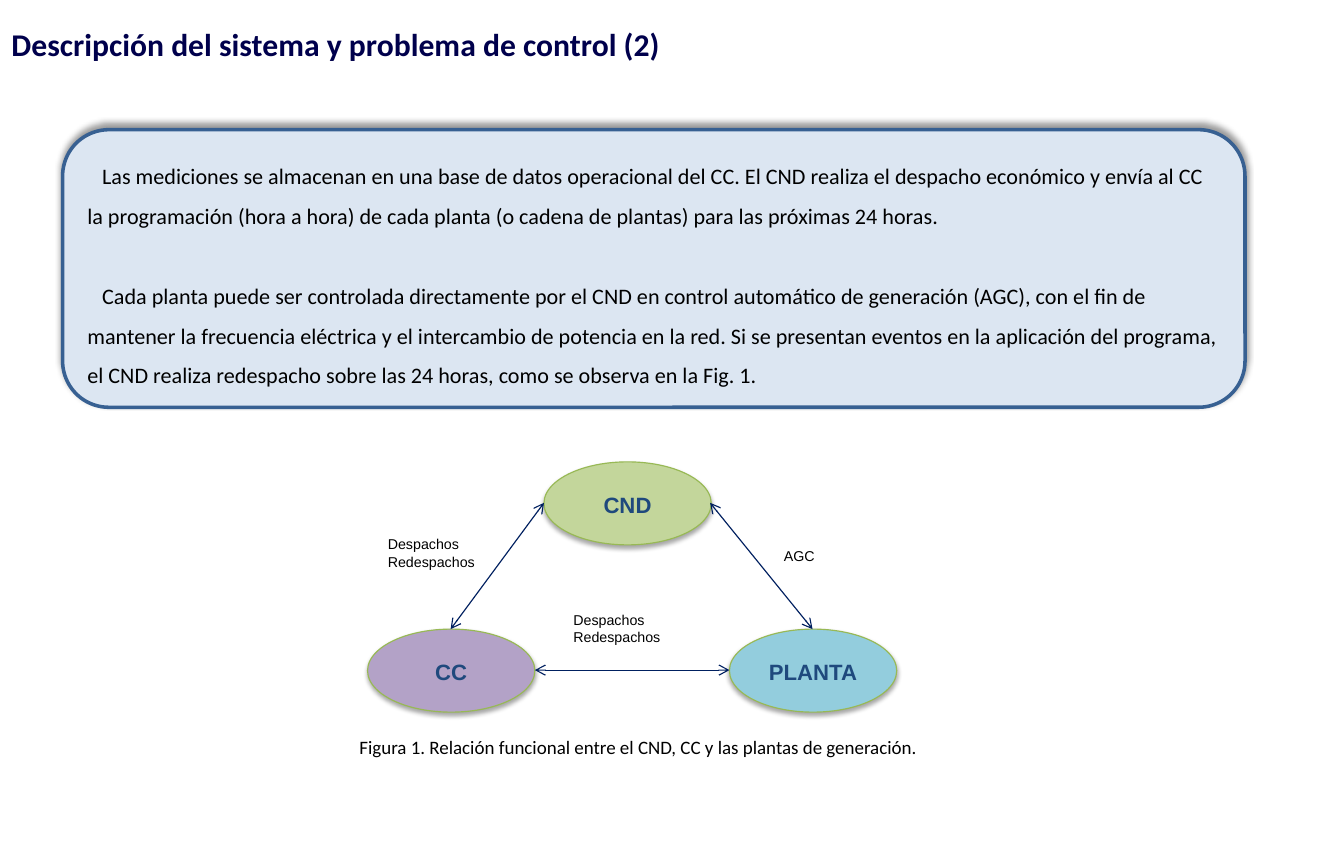
from lxml.etree import SubElement
from pptx import Presentation
from pptx.dml.color import RGBColor
from pptx.enum.shapes import MSO_CONNECTOR, MSO_SHAPE
from pptx.enum.text import MSO_ANCHOR as Anchor, MSO_AUTO_SIZE as AutoSize, PP_ALIGN as Align
from pptx.oxml.ns import qn
from pptx.util import Inches, Pt


def rgb(value):
    """Turn a hex string into a colour."""
    return RGBColor.from_string(value)


class SlideBuilder:
    """Hold the style and the current slide, and add elements to it."""

    NAVY, BLACK, LABEL = "00004C", "000000", "1F497D"
    ARROW, NODE_LINE = "002060", "98B955"

    def __init__(self, prs):
        """Add a title-only slide."""
        self.s = prs.slides.add_slide(prs.slide_layouts[5])

    def set_text(self, tf, lines, size, font, color=BLACK, bold=False, align=Align.LEFT):
        """Fill a text frame with one paragraph per line."""
        tf.word_wrap = True
        tf.text = "\n".join(lines)
        for p in tf.paragraphs:
            p.alignment = align
            for r in p.runs:
                r.font.size, r.font.name, r.font.bold = Pt(size), font, bold
                r.font.color.rgb = rgb(color)

    def title(self, text, box):
        """Place and format the title placeholder."""
        sp = self.s.shapes.title
        sp.left, sp.top, sp.width, sp.height = map(Inches, box)
        tf = sp.text_frame
        tf.auto_size, tf.vertical_anchor = AutoSize.NONE, Anchor.MIDDLE
        self.set_text(tf, [text], 20, "Calibri", self.NAVY, True)

    def text(self, lines, box, size, font, align=Align.LEFT):
        """Add a text box."""
        sp = self.s.shapes.add_textbox(*map(Inches, box))
        self.set_text(sp.text_frame, lines, size, font, align=align)

    def shape(self, kind, box, fill, line, width, shadow):
        """Add a filled, outlined shape with an outer shadow."""
        sp = self.s.shapes.add_shape(kind, *map(Inches, box))
        sp.fill.solid()
        sp.fill.fore_color.rgb = rgb(fill)
        sp.line.color.rgb, sp.line.width = rgb(line), Pt(width)
        sp.shadow.inherit = False
        alpha, blur, dist, angle = shadow
        effects = sp._element.spPr.find(qn("a:effectLst"))
        outer = SubElement(effects, qn("a:outerShdw"), blurRad=str(Pt(blur)), dist=str(Pt(dist)),
                           dir=str(angle * 60000), rotWithShape="0")
        clr = SubElement(outer, qn("a:srgbClr"), val=self.BLACK)
        SubElement(clr, qn("a:alpha"), val=str(alpha * 1000))
        return sp

    def panel(self, paragraphs, box):
        """Add the rounded panel with the body text."""
        sp = self.shape(MSO_SHAPE.ROUNDED_RECTANGLE, box, "DCE6F2", "376092", 2.25, (40, 4, 3, 270))
        tf = sp.text_frame
        tf.vertical_anchor = Anchor.TOP
        self.set_text(tf, paragraphs, 14, "Calibri")
        for i, p in enumerate(tf.paragraphs):
            p.line_spacing = 1.5
            p.space_before = Pt(25.6 if i else 0)
            p._p.get_or_add_pPr().set("indent", str(Inches(0.13)))

    def node(self, label, left, top, fill):
        """Add a labelled ellipse of the diagram."""
        sp = self.shape(MSO_SHAPE.OVAL, (left, top, 1.47, 0.73), fill, self.NODE_LINE, 0.75,
                        (35, 3.1, 1.8, 90))
        tf = sp.text_frame
        tf.vertical_anchor = Anchor.MIDDLE
        tf.margin_left = tf.margin_right = Inches(0.09)
        tf.margin_top = tf.margin_bottom = Inches(0.04)
        self.set_text(tf, [label], 14, "Arial", self.LABEL, True, Align.CENTER)
        tf.paragraphs[0].line_spacing = Pt(18)

    def arrow(self, start, end):
        """Add a line with open arrowheads at both ends."""
        cx = self.s.shapes.add_connector(MSO_CONNECTOR.STRAIGHT, *map(Inches, start + end))
        cx.line.color.rgb, cx.line.width = rgb(self.ARROW), Pt(0.75)
        props = cx._element.spPr
        ln = props.find(qn("a:ln"))
        for tag in ("a:headEnd", "a:tailEnd"):
            SubElement(ln, qn(tag), type="arrow")
        SubElement(props, qn("a:effectLst"))


def main():
    """Build the slide and save it."""
    prs = Presentation()
    prs.slide_width, prs.slide_height = Inches(11.81), Inches(7.48)
    b = SlideBuilder(prs)

    b.title("Descripción del sistema y problema de control (2)", (0, -0.2, 8.56, 1.17))
    b.panel([
        "Las mediciones se almacenan en una base de datos operacional del CC. El CND realiza el "
        "despacho económico y envía al CC la programación (hora a hora) de cada planta (o cadena "
        "de plantas) para las próximas 24 horas.",
        "Cada planta puede ser controlada directamente por el CND en control automático de "
        "generación (AGC), con el fin de mantener la frecuencia eléctrica y el intercambio de "
        "potencia en la red. Si se presentan eventos en la aplicación del programa, el CND realiza "
        "redespacho sobre las 24 horas, como se observa en la Fig. 1.",
    ], (0.55, 1.14, 10.39, 2.44))
    b.text(["Figura 1. Relación funcional entre el CND, CC y las plantas de generación."],
           (1.75, 6.42, 7.72, 0.3), 12, "Calibri", Align.CENTER)

    for label, left, top, fill in (("CND", 4.78, 4.06, "C3D69B"),
                                   ("PLANTA", 6.41, 5.53, "93CDDD"),
                                   ("CC", 3.23, 5.53, "B3A2C7")):
        b.node(label, left, top, fill)
    for start, end in (((4.78, 4.42), (3.96, 5.53)),
                       ((6.24, 4.42), (7.14, 5.53)),
                       ((6.41, 5.89), (4.7, 5.89))):
        b.arrow(start, end)

    dispatch = ["Despachos", "Redespachos"]
    for lines, left, top, height in ((dispatch, 3.31, 4.66, 0.54),
                                     (dispatch, 4.94, 5.32, 0.54),
                                     (["AGC"], 6.79, 4.76, 0.25)):
        b.text(lines, (left, top, 1.3, height), 9, "Arial")

    prs.save("out.pptx")


if __name__ == "__main__":
    main()
